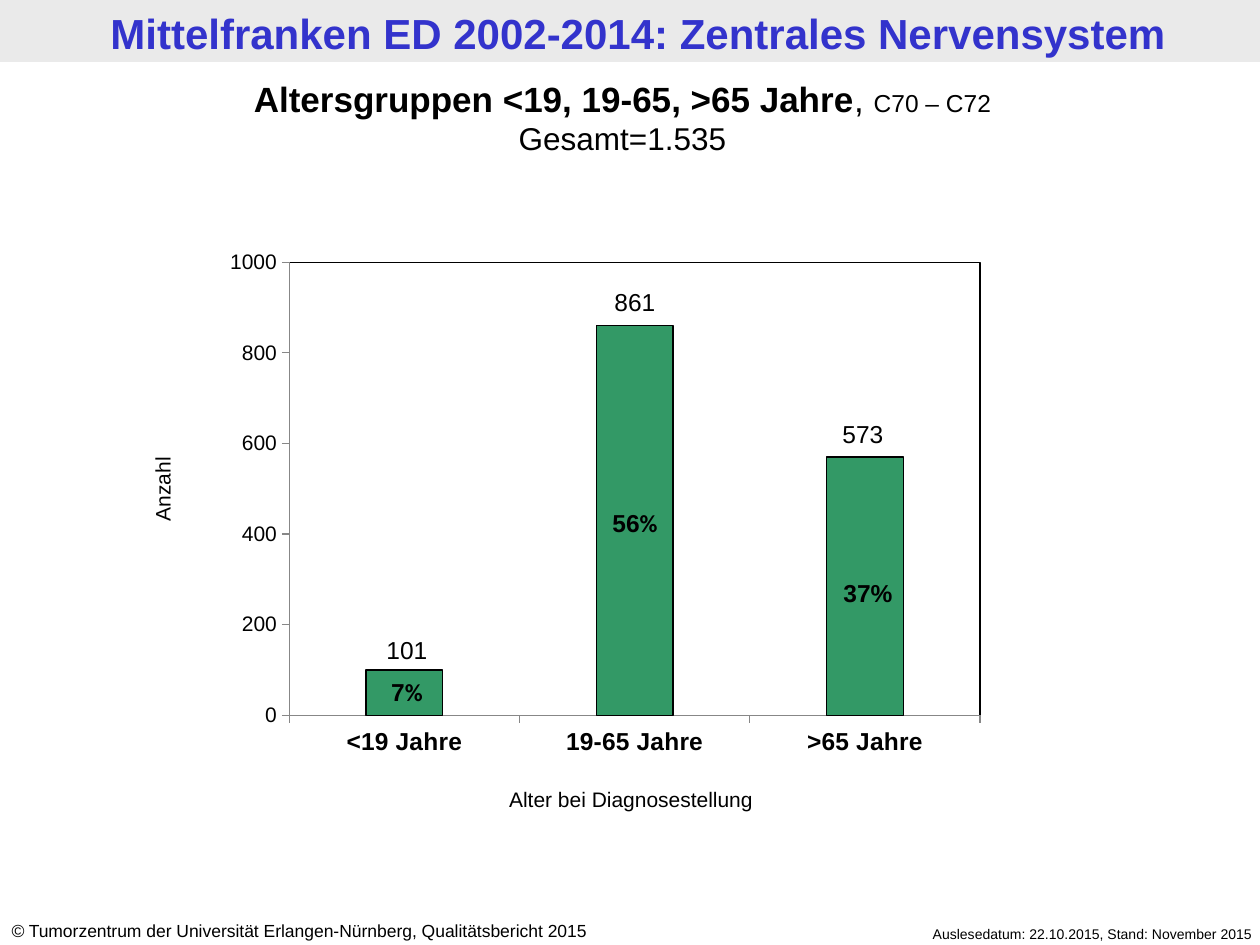
from lxml import etree
from pptx import Presentation
from pptx import util as u
from pptx.chart import data as chart_data
from pptx.dml import color as dml
from pptx.enum import chart as charts, shapes, text
from pptx.oxml import ns

SCALE = 914400 / 126
CENTER, LEFT, RIGHT = text.PP_ALIGN.CENTER, text.PP_ALIGN.LEFT, text.PP_ALIGN.RIGHT


def px(*lengths):
    return [u.Emu(round(length * SCALE)) for length in lengths]


def rgb(value):
    return dml.RGBColor.from_string(value)


def apply(target, **values):
    for name, value in values.items():
        setattr(target, name, value)


def style(font, size, color="000000", name="Arial", bold=False, italic=False):
    apply(font, size=u.Pt(size), name=name, bold=bold, italic=italic)
    font.color.rgb = rgb(color)


def write(frame, paragraphs, align=CENTER):
    apply(frame, word_wrap=True, auto_size=text.MSO_AUTO_SIZE.NONE,
          vertical_anchor=text.MSO_ANCHOR.TOP)
    for index, runs in enumerate(paragraphs):
        paragraph = frame.add_paragraph() if index else frame.paragraphs[0]
        apply(paragraph, alignment=align, space_before=u.Pt(0))
        for words, values in runs:
            run = paragraph.add_run()
            run.text = words
            style(run.font, **values)


def add_label(slide, box, paragraphs, align=CENTER, rotation=0):
    shape = slide.shapes.add_textbox(*px(*box))
    shape.rotation = rotation
    write(shape.text_frame, paragraphs, align)


def add_header(slide, box):
    left, top, width, height = box
    band = slide.shapes.add_shape(shapes.MSO_SHAPE.RECTANGLE, *px(*box))
    band.shadow.inherit = False
    band.fill.solid()
    band.fill.fore_color.rgb = rgb("EAEAEA")
    band.line.fill.background()
    title = slide.shapes.title
    title.element.addprevious(band.element)
    place = px(left + 8, top + 1, width, height)
    apply(title, **dict(zip(("left", "top", "width", "height"), place)))
    write(title.text_frame, [[("Mittelfranken ED 2002-2014: Zentrales Nervensystem",
                               dict(size=24, color="3333CC", bold=True))]])


def add_subtitle(slide, box):
    add_label(slide, box, [
        [("Altersgruppen <19, 19-65, >65 Jahre", dict(size=20, bold=True)),
         (", ", dict(size=20)), ("C70 – C72", dict(size=14))],
        [("Gesamt=1.535", dict(size=18))]])


def set_plot_area(chart, color, **layout):
    area = chart.element.find(".//" + ns.qn("c:plotArea"))
    for old in area.findall(ns.qn("c:layout")):
        area.remove(old)
    node = etree.Element(ns.qn("c:layout"))
    area.insert(0, node)
    manual = etree.SubElement(node, ns.qn("c:manualLayout"))
    settings = dict(layoutTarget="inner", xMode="edge", yMode="edge", **layout)
    for name, value in settings.items():
        etree.SubElement(manual, ns.qn("c:" + name), val=str(value))
    properties = etree.SubElement(area, ns.qn("c:spPr"))
    etree.SubElement(properties, ns.qn("a:noFill"))
    line = etree.SubElement(properties, ns.qn("a:ln"), w=str(u.Pt(0.75)))
    fill = etree.SubElement(line, ns.qn("a:solidFill"))
    etree.SubElement(fill, ns.qn("a:srgbClr"), val=color)


def add_age_chart(slide, box):
    data = chart_data.CategoryChartData()
    data.categories = ["<19 Jahre", "19-65 Jahre", ">65 Jahre"]
    data.add_series("Anzahl", (100, 860, 570))
    chart = slide.shapes.add_chart(
        charts.XL_CHART_TYPE.COLUMN_STACKED, *px(*box), data).chart
    apply(chart, has_title=False, has_legend=False)
    style(chart.font, 18, name="Calibri")
    apply(chart.plots[0], gap_width=200, overlap=100, vary_by_categories=False)
    for axis, size, bold in ((chart.category_axis, 14, True), (chart.value_axis, 12, False)):
        apply(axis, major_tick_mark=charts.XL_TICK_MARK.OUTSIDE,
              minor_tick_mark=charts.XL_TICK_MARK.NONE,
              has_major_gridlines=False, has_title=False)
        style(axis.tick_labels.font, size, bold=bold)
        axis.format.line.color.rgb = rgb("878787")
    apply(chart.value_axis, minimum_scale=0, maximum_scale=1000, major_unit=200)
    bars = chart.plots[0].series[0].format
    bars.fill.solid()
    bars.fill.fore_color.rgb = rgb("339966")
    bars.line.color.rgb = rgb("000000")
    bars.line.width = u.Pt(0.75)
    set_plot_area(chart, "000000", x=0.113, y=0.142, w=0.786, h=0.772)


def add_chart_labels(slide, box):
    left, top = box[:2]
    plain, bold = dict(size=14), dict(size=14, bold=True)
    calibri = dict(bold, name="Calibri")
    labels = [
        (390, 323, 110, [("56", bold), ("%", calibri)]),
        (618, 393, 120, [("37%", bold)]),
        (162, 492, 110, [("7", bold), ("%", calibri)]),
        (381, 102, 128, [("861", plain)]),
        (609, 234, 128, [("573", plain)]),
        (153, 450, 128, [("101", plain)]),
    ]
    for x, y, width, runs in labels:
        add_label(slide, (left + x, top + y, width, 43), [runs])
    for x, y, width, words, rotation in (
            (231, 601, 420, "Alter bei Diagnosestellung", 0),
            (-192, 291, 329, "Anzahl", 270)):
        add_label(slide, (left + x, top + y, width, 38),
                  [[(words, dict(size=12))]], rotation=rotation)


def add_footer(slide, box):
    left, top, width, height = box
    add_label(slide, (left + width - 422, top + 5, 427, height - 4),
              [[("Auslesedatum: 22.10.2015, Stand: November 2015", dict(size=8))]], RIGHT)
    add_label(slide, (left - 1, top, 660, height),
              [[("©", dict(size=10, italic=True)),
                (" Tumorzentrum der Universität Erlangen-Nürnberg, Qualitätsbericht 2015",
                 dict(size=10))]], LEFT)


def main():
    presentation = Presentation()
    size = px(1260, 945)
    apply(presentation, slide_width=size[0], slide_height=size[1])
    slide = presentation.slides.add_slide(presentation.slide_layouts[5])
    chart_box = (190, 179, 879, 587)
    add_header(slide, (0, 0, 1260, 62))
    add_subtitle(slide, (0, 71, 1245, 93))
    add_age_chart(slide, chart_box)
    add_chart_labels(slide, chart_box)
    add_footer(slide, (0, 914, 1260, 34))
    presentation.save("out.pptx")


if __name__ == "__main__":
    main()
